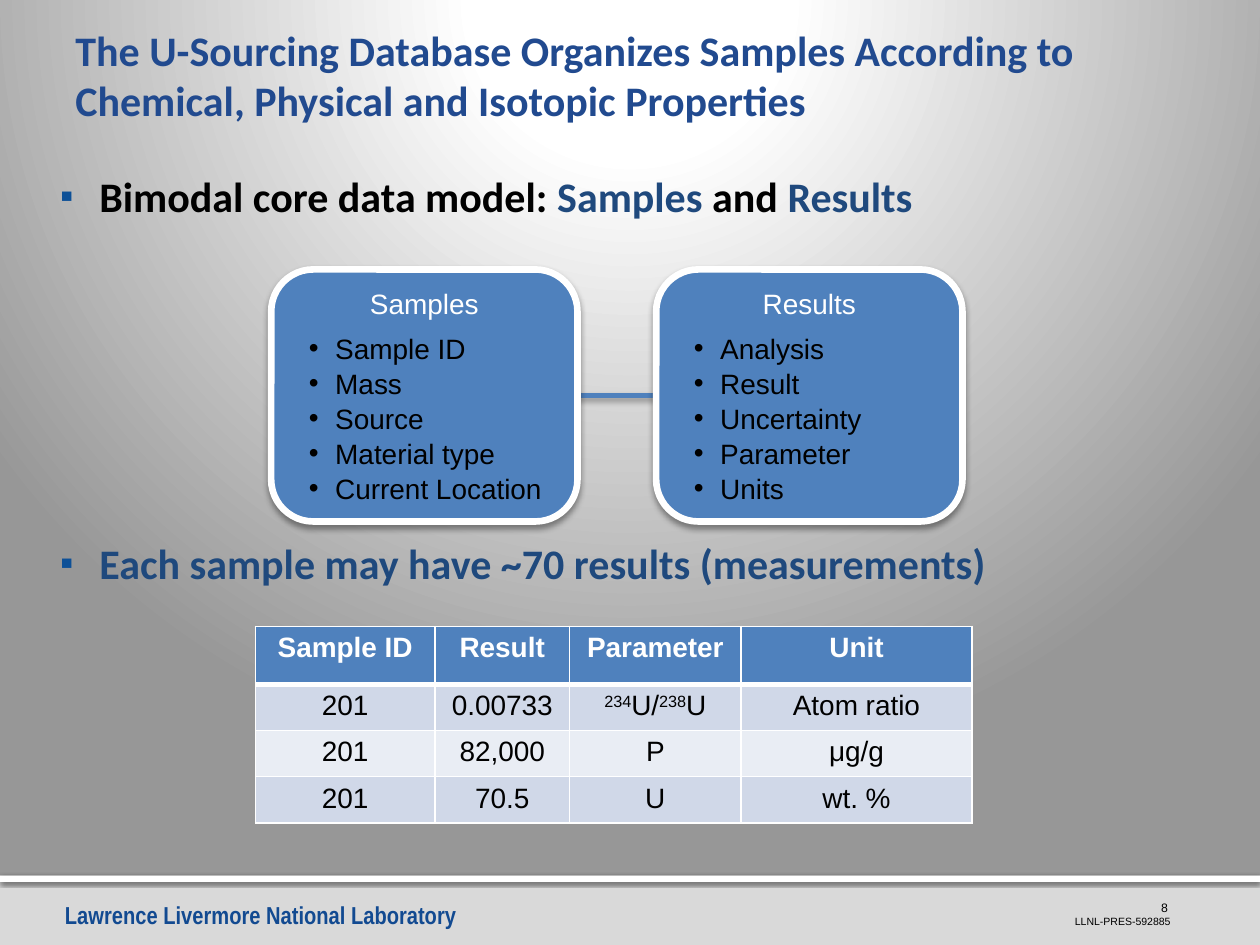
from pptx import Presentation
from pptx.dml.color import RGBColor
from pptx.enum.shapes import MSO_CONNECTOR, MSO_SHAPE
from pptx.enum.text import MSO_ANCHOR, PP_ALIGN
from pptx.oxml import parse_xml
from pptx.oxml.ns import nsdecls
from pptx.util import Pt

color = RGBColor.from_string


def add_xml(parent, tag, inner="", attributes=""):
    element = parse_xml(f"<{tag} {nsdecls('a', 'p')} {attributes}>{inner}</{tag}>")
    parent.append(element)
    return element


def add_span(para, text, size, face, ink, bold=False):
    span = para.add_run()
    span.text = text
    for name, value in {"size": Pt(size), "name": face, "bold": bold}.items():
        setattr(span.font, name, value)
    span.font.color.rgb = color(ink)
    return span


shadow = (
    '<a:outerShdw blurRad="{}" dist="{}" dir="5400000" rotWithShape="0">'
    '<a:srgbClr val="000000"><a:alpha val="{}"/></a:srgbClr></a:outerShdw>'
)
soft_shadow = shadow.format(Pt(3.5), Pt(2), 38000)
bar_shadow = shadow.format(Pt(3.1), Pt(2), 38000)
rule_shadow = shadow.format(Pt(2.5), Pt(0.8), 60000)

deck = Presentation()
deck.slide_width, deck.slide_height = Pt(720), Pt(540)
page = deck.slides.add_slide(deck.slide_layouts[6])

stops = "".join(
    f'<a:gs pos="{place}000"><a:srgbClr val="{ink}"/></a:gs>'
    for place, ink in [(0, "FFFFFF"), (20, "FFFFFF"), (100, "979797")]
)
backdrop = add_xml(
    page._element.cSld,
    "p:bg",
    f'<p:bgPr><a:gradFill rotWithShape="1"><a:gsLst>{stops}</a:gsLst><a:path path="circle">'
    '<a:fillToRect l="10000" t="-25000" r="10000" b="125000"/></a:path></a:gradFill>'
    "<a:effectLst/></p:bgPr>",
)
page._element.cSld.insert(0, backdrop)

for height, ink, effect in [(39.6, "D9D9D9", bar_shadow), (3.6, "FFFFFF", rule_shadow)]:
    bar = page.shapes.add_shape(MSO_SHAPE.RECTANGLE, 0, Pt(500.4), Pt(720), Pt(height))
    bar.fill.solid()
    bar.fill.fore_color.rgb = color(ink)
    bar.line.fill.background()
    add_xml(bar._element.spPr, "a:effectLst", effect)

title = "The U-Sourcing Database Organizes Samples According to Chemical, Physical and Isotopic Properties"
default_insets = (7.2, 3.6, 7.2, 3.6)
left, right = PP_ALIGN.LEFT, PP_ALIGN.RIGHT
top, middle, bottom = MSO_ANCHOR.TOP, MSO_ANCHOR.MIDDLE, MSO_ANCHOR.BOTTOM
labels = [
    ((30, 511, 240, 24), default_insets, top, True, left,
     ("Lawrence Livermore National Laboratory", 14, "Arial Narrow", "124A91", True)),
    ((613.5, 519, 62.5, 11), (0, 3.6, 7.2, 0), bottom, False, right,
     ("LLNL-PRES-592885", 6, "Arial", "000000")),
    ((646.5, 511, 28, 12), default_insets, top, True, right, ("8", 7, "Arial", "000000")),
    ((36, 6, 648, 73), (7.2, 3.6, 3.6, 3.6), middle, True, left,
     (title, 24, "Calibri", "214A8F", True)),
    ((21, 90, 675, 387), (4.3, 7.2, 7.2, 3.6), top, True, left, None),
]
for place, insets, anchor, wrap, align, words in labels:
    box = page.shapes.add_textbox(*map(Pt, place))
    frame = box.text_frame
    for side, inset in zip(("left", "top", "right", "bottom"), insets):
        setattr(frame, f"margin_{side}", Pt(inset))
    frame.vertical_anchor, frame.word_wrap = anchor, wrap
    frame.paragraphs[0].alignment = align
    if words:
        add_span(frame.paragraphs[0], *words)

points = [
    (0, [("Bimodal core data model: ", "000000"), ("Samples", "1F497D"),
         (" and ", "000000"), ("Results", "1F497D")]),
    (175, [("Each sample may have ~70 results (measurements)", "1F497D")]),
]
for index, (gap, spans) in enumerate(points):
    para = frame.add_paragraph() if index else frame.paragraphs[0]
    para.space_before, para.space_after = Pt(gap), Pt(6)
    layout = para._p.get_or_add_pPr()
    layout.set("marL", str(Pt(31.5)))
    layout.set("indent", str(Pt(-22.5)))
    add_xml(layout, "a:buClr", '<a:srgbClr val="0D5097"/>')
    add_xml(layout, "a:buSzPct", attributes='val="90000"')
    add_xml(layout, "a:buFont", attributes='typeface="Arial"')
    add_xml(layout, "a:buChar", attributes='char="▪"')
    for text, ink in spans:
        add_span(para, text, 24, "Calibri", ink, True)

link = page.shapes.add_connector(MSO_CONNECTOR.STRAIGHT, Pt(330), Pt(226), Pt(375), Pt(226))
link.line.color.rgb = color("4F81BD")
link.line.width = Pt(2.5)
add_xml(link._element.spPr, "a:effectLst", soft_shadow)

cards = [
    ("Results", 375, ["Analysis", "Result", "Uncertainty", "Parameter", "Units"], link.end_connect, 1),
    ("Samples", 155, ["Sample ID", "Mass", "Source", "Material type", "Current Location"],
     link.begin_connect, 3),
]
for heading, x, fields, connect, side in cards:
    card = page.shapes.add_shape(MSO_SHAPE.ROUNDED_RECTANGLE, Pt(x), Pt(154), Pt(175), Pt(144))
    card.fill.solid()
    card.fill.fore_color.rgb = color("4F81BD")
    card.line.color.rgb = color("FFFFFF")
    card.line.width = Pt(3.8)
    add_xml(card._element.spPr, "a:effectLst", soft_shadow)
    frame = card.text_frame
    frame.word_wrap, frame.vertical_anchor = True, middle
    para = frame.paragraphs[0]
    para.alignment, para.space_after = PP_ALIGN.CENTER, Pt(6)
    add_span(para, heading, 16, "Arial", "FFFFFF")
    for field in fields:
        para = frame.add_paragraph()
        para.alignment, para.line_spacing = left, 1.04
        layout = para._p.get_or_add_pPr()
        layout.set("marL", str(Pt(22.5)))
        layout.set("indent", str(Pt(-15)))
        add_xml(layout, "a:buFont", attributes='typeface="Arial"')
        add_xml(layout, "a:buChar", attributes='char="•"')
        add_span(para, field, 16, "Arial", "000000")
    connect(card, side)

rows = [
    ["Sample ID", "Result", "Parameter", "Unit"],
    ["201", "0.00733", "^234^U/^238^U", "Atom ratio"],
    ["201", "82,000", "P", "μg/g"],
    ["201", "70.5", "U", "wt. %"],
]
table = page.shapes.add_table(4, 4, Pt(146), Pt(358), Pt(409), Pt(108)).table
for column, width in zip(table.columns, [102.5, 77, 98, 132]):
    column.width = Pt(width)
for row, height in zip(table.rows, [33, 25, 25, 25]):
    row.height = Pt(height)
for r, values in enumerate(rows):
    for c, value in enumerate(values):
        cell = table.cell(r, c)
        borders = {"L": 1, "R": 1, "T": 3 if r == 1 else 1, "B": 1 if r else 3}
        for edge, width in borders.items():
            add_xml(cell._tc.get_or_add_tcPr(), f"a:ln{edge}",
                    '<a:solidFill><a:srgbClr val="FFFFFF"/></a:solidFill>', f'w="{Pt(width)}"')
        cell.fill.solid()
        cell.fill.fore_color.rgb = color(["4F81BD", "D0D8E8", "E9EDF4", "D0D8E8"][r])
        para = cell.text_frame.paragraphs[0]
        para.alignment = PP_ALIGN.CENTER
        for index, text in enumerate(value.split("^")):
            if text:
                span = add_span(para, text, 16, "Arial", "000000" if r else "FFFFFF", r == 0)
                if index % 2:
                    span._r.get_or_add_rPr().set("baseline", "30000")

deck.save("out.pptx")
